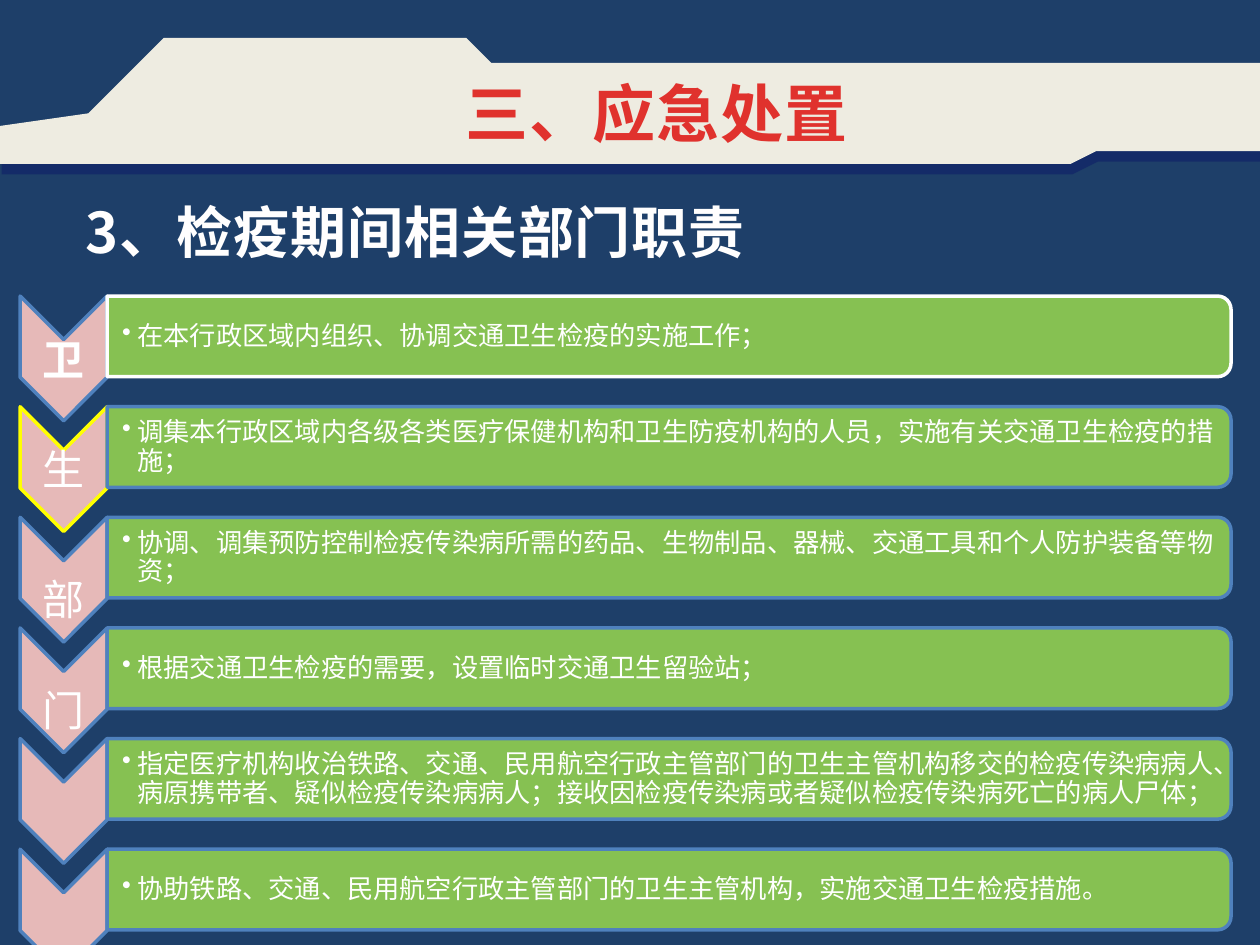
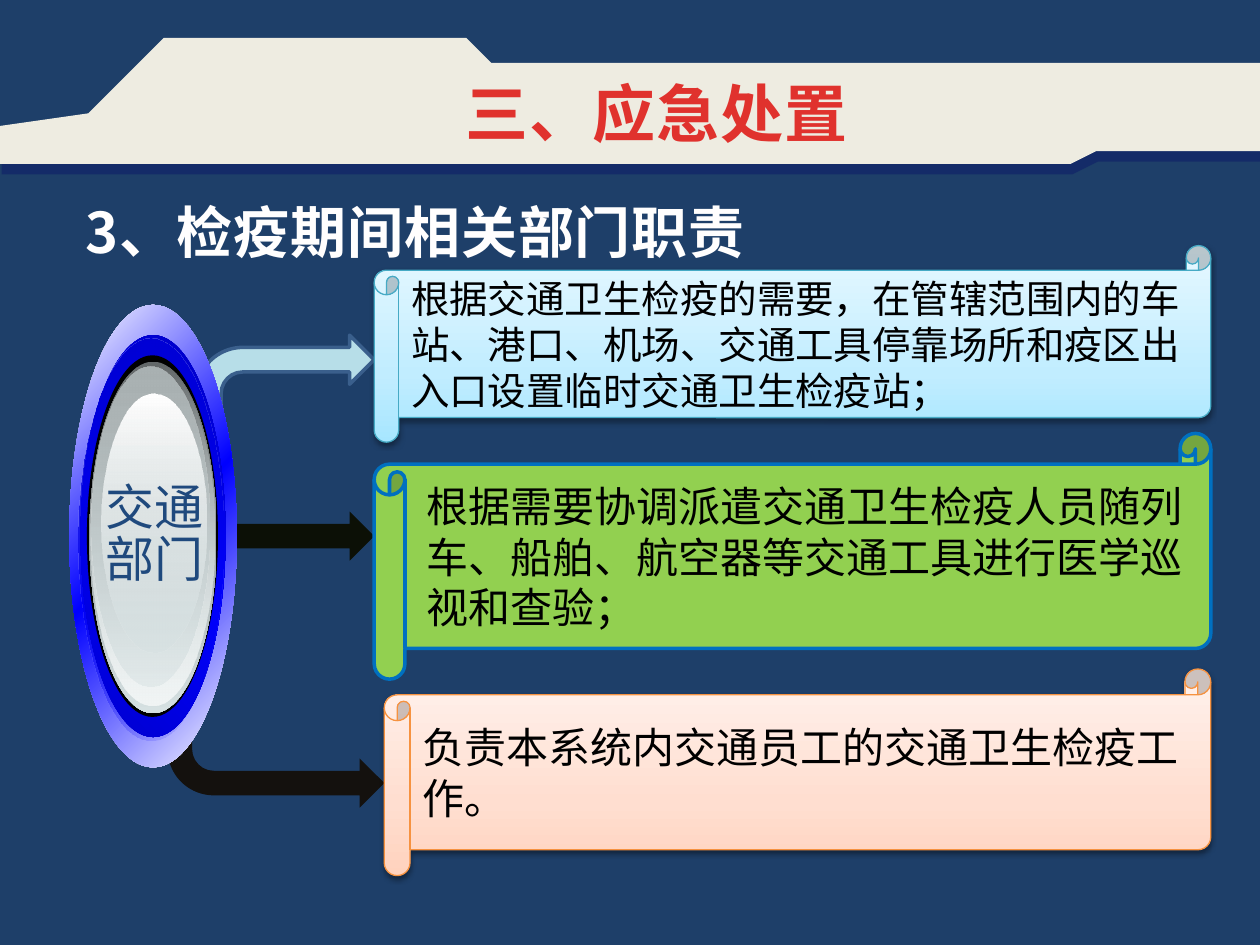
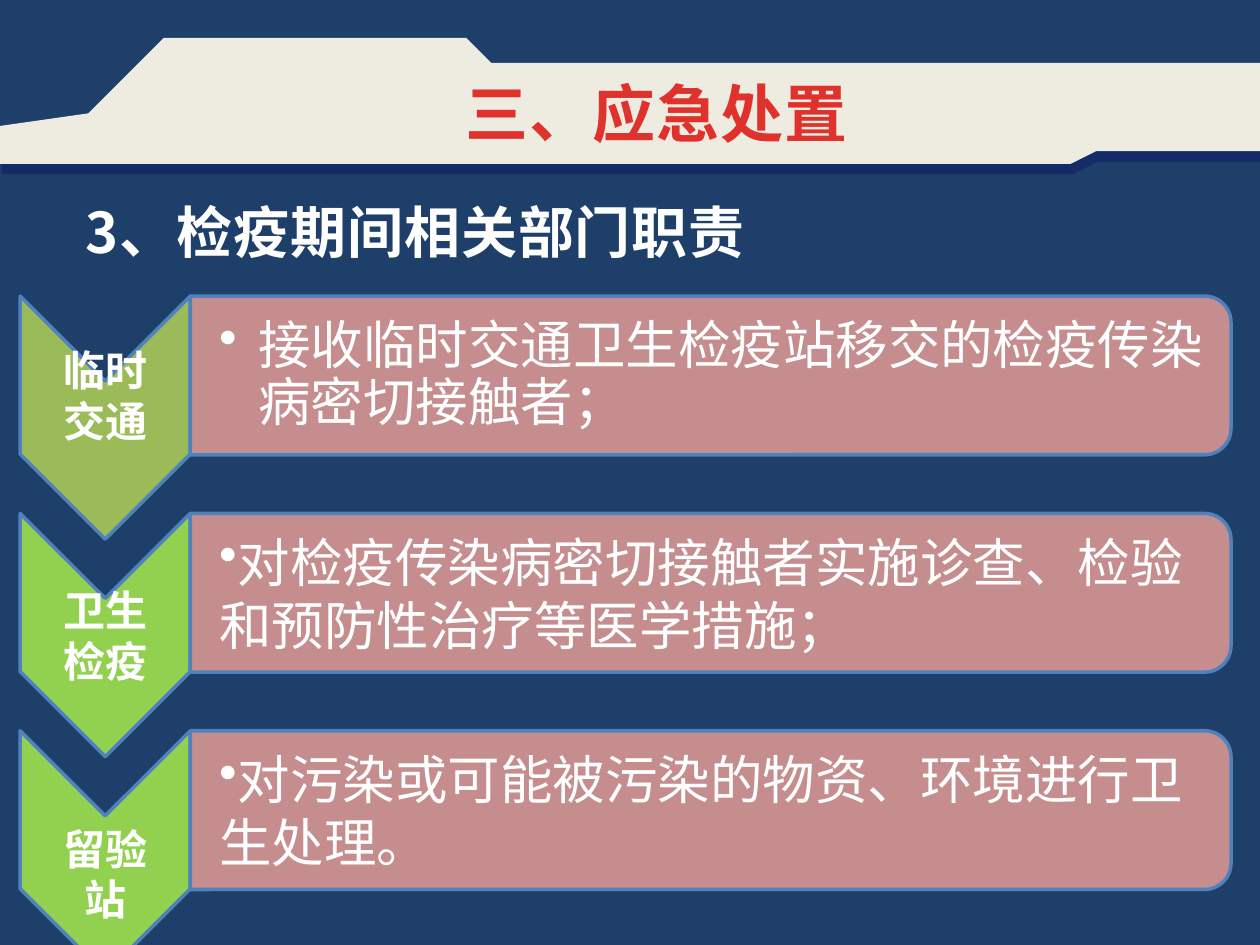
import dataclasses
from typing import NamedTuple, Optional, Union

import lxml.etree
import pptx
import pptx.dml.color
import pptx.enum.shapes
import pptx.enum.text
import pptx.oxml.ns
import pptx.util

# ---- Shared look: a grid of 100 columns by 75 rows covers the slide ----
SLIDE_W, SLIDE_H = pptx.util.Inches(10), pptx.util.Inches(7.5)
COLUMNS = 100
CELL = SLIDE_W // COLUMNS
FONT = "Noto Sans CJK SC"
NAVY, IVORY, RED, WHITE, BLACK = "1F497D", "EEECE1", "E0322D", "FFFFFF", "000000"
EDGE, LIME, PINK, ROSE, OLIVE = "4F81BD", "92D050", "E6B9B8", "D99694", "9BBB59"
LOOSE, TIGHT = 1.2, 1.08  # line height as a share of the text size

TITLE = "三、应急处置"
HEADING = "3、检疫期间相关部门职责"

SHAPE = pptx.enum.shapes.MSO_SHAPE
ALIGN = pptx.enum.text.PP_ALIGN
ANCHOR = pptx.enum.text.MSO_ANCHOR
qn = pptx.oxml.ns.qn


class Box(NamedTuple):
    left: float
    top: float
    width: float
    height: float


class Stop(NamedTuple):
    pos: int
    color: str
    alpha: int = 100


class Gradient(NamedTuple):
    angle: int
    stops: tuple


class Line(NamedTuple):
    color: str
    width: float = 2


class Shadow(NamedTuple):
    color: str
    alpha: int
    blur: float
    dist: float
    angle: int


class Style(NamedTuple):
    size: float
    color: str = WHITE
    bold: bool = False
    spacing: float = LOOSE
    tracking: int = 0
    align: Optional[ALIGN] = None


@dataclasses.dataclass(frozen=True)
class Row:
    text: str
    label: tuple = ()
    label_bold: bool = False
    label_drop: float = 0
    chevron_fill: str = PINK
    chevron_line: str = EDGE
    bar_line: str = EDGE
    indent: float = 0
    spacing: float = TIGHT


@dataclasses.dataclass(frozen=True)
class ChevronList:
    rows: tuple
    pitch: float
    chevron: Box  # first chevron as it is seen
    bar: Box  # first bar as it is seen
    bar_fill: str
    size: int
    margin: float


@dataclasses.dataclass(frozen=True)
class Scroll:
    box: Box
    text: str
    size: int
    fill: Union[str, Gradient]
    line: Line
    shadow: Optional[Shadow] = None
    left: float = 1
    right: float = 1


# ---- Drawing helpers ----
def grid(n: float) -> int:
    return round(n * CELL)


def sub(parent, tag: str, **attrs):
    return lxml.etree.SubElement(parent, qn(tag), {k: str(v) for k, v in attrs.items()})


def color(parent, hex_color: str, alpha: int = 100) -> None:
    node = sub(parent, "a:srgbClr", val=hex_color)
    if alpha < 100:
        sub(node, "a:alpha", val=alpha * 1000)


def paint(shape, fill, alpha: int = 100, line: Optional[Line] = None,
          shadow: Optional[Shadow] = None) -> None:
    spPr = shape.element.spPr
    shape.fill.background()
    old = spPr.find(qn("a:noFill"))
    if isinstance(fill, Gradient):
        new = lxml.etree.Element(qn("a:gradFill"), rotWithShape="1")
        stops = sub(new, "a:gsLst")
        for stop in fill.stops:
            color(sub(stops, "a:gs", pos=stop.pos * 1000), stop.color, stop.alpha)
        sub(new, "a:lin", ang=fill.angle * 60000, scaled=0)
    else:
        new = lxml.etree.Element(qn("a:solidFill"))
        color(new, fill, alpha)
    spPr.replace(old, new)
    if line:
        shape.line.color.rgb = pptx.dml.color.RGBColor.from_string(line.color)
        shape.line.width = pptx.util.Pt(line.width)
    else:
        shape.line.fill.background()
    shape.shadow.inherit = False
    if shadow:
        outer = sub(spPr.find(qn("a:effectLst")), "a:outerShdw",
                    blurRad=pptx.util.Pt(shadow.blur), dist=pptx.util.Pt(shadow.dist),
                    dir=shadow.angle * 60000, algn="ctr", rotWithShape=0)
        color(outer, shadow.color, shadow.alpha)


def add_shape(s, kind, box: Box, fill, turned: bool = False, **look):
    """Draw a preset shape; a turned one fills its box after a quarter turn."""
    left, top, width, height = box
    if turned:
        left, top = left + (width - height) / 2, top + (height - width) / 2
        width, height = height, width
    shape = s.shapes.add_shape(kind, *map(grid, (left, top, width, height)))
    shape.rotation = 90 if turned else 0
    paint(shape, fill, **look)
    return shape


def write(tf, lines, style: Style, indent: Optional[float] = None,
          bullet: Optional[str] = None) -> None:
    for i, text in enumerate(lines):
        p = tf.paragraphs[0] if i == 0 else tf.add_paragraph()
        p.alignment = style.align
        p.line_spacing = pptx.util.Pt(round(style.size * style.spacing, 1))
        p.space_before = pptx.util.Pt(0)
        if indent is not None:
            pPr = p._p.get_or_add_pPr()
            pPr.set("marL", str(grid(indent)))
            pPr.set("indent", str(-grid(indent)))
            if bullet:
                sub(pPr, "a:buChar", char=bullet)
            else:
                sub(pPr, "a:buNone")
        r = p.add_run()
        r.text = text
        r.font.size = pptx.util.Pt(style.size)
        r.font.bold = style.bold
        r.font.color.rgb = pptx.dml.color.RGBColor.from_string(style.color)
        r.font.name = FONT
        rPr = r._r.get_or_add_rPr()
        sub(rPr, "a:ea", typeface=FONT)
        if style.tracking:
            rPr.set("spc", str(style.tracking))


def set_frame(tf, left: float, top: float, right: float, bottom: float) -> None:
    tf.word_wrap = True
    tf.vertical_anchor = ANCHOR.MIDDLE
    tf.margin_left, tf.margin_top = grid(left), grid(top)
    tf.margin_right, tf.margin_bottom = grid(right), grid(bottom)


def add_text(s, box: Box, lines, style: Style, left: float = 0.2, edge: float = 0.2,
             **paragraph) -> None:
    tf = s.shapes.add_textbox(*map(grid, box)).text_frame
    set_frame(tf, left, edge, edge, edge)
    write(tf, lines, style, **paragraph)


# ---- Template: background, title band and placeholder places ----
BAND = ((7.4, 9.3), (12.9, 3.2), (37.3, 3.2), (38.8, 5.2), (100, 5.2),
        (99.9, 11.6), (86.6, 11.8), (84.8, 13.2), (-0.2, 13.2), (0.1, 9.6))
PLACEHOLDERS = (Box(11.7, 5.8, 80.8, 6.2), Box(5.8, 15.2, 90, 57.4))


def prepare_template(prs):
    fill = prs.slide_master.background.fill
    fill.solid()
    fill.fore_color.rgb = pptx.dml.color.RGBColor.from_string(NAVY)
    layout = prs.slide_layouts[1]
    for ph, box in zip(layout.placeholders, PLACEHOLDERS):
        ph.left, ph.top, ph.width, ph.height = map(grid, box)
    return layout


def move_band_to_layout(s, layout) -> None:
    veil = add_shape(s, SHAPE.RECTANGLE, Box(0, 0, 100, 75), "1A1A1A", alpha=20)
    builder = s.shapes.build_freeform(*BAND[0], scale=CELL)
    builder.add_line_segments(BAND[1:], close=True)
    band = builder.convert_to_shape()
    paint(band, IVORY, shadow=Shadow("000066", 30, 0, 6.1, 81))
    for place, shape in enumerate((veil, band), start=2):
        layout.shapes.element.insert(place, shape.element)


def add_slide(prs, layout):
    s = prs.slides.add_slide(layout)
    title, body = s.placeholders
    title.text_frame.vertical_anchor = ANCHOR.MIDDLE
    write(title.text_frame, [TITLE],
          Style(36, RED, bold=True, tracking=50, align=ALIGN.CENTER))
    write(body.text_frame, [HEADING], Style(32, "FFFEFE", bold=True, tracking=50),
          indent=3.8)
    return s


# ---- Slides 1 and 3: chevrons with bars ----
def draw_chevron_list(s, spec_list: ChevronList) -> None:
    c = spec_list
    for i, row in enumerate(c.rows):
        shift = i * c.pitch
        chevron = c.chevron._replace(top=c.chevron.top + shift)
        bar = c.bar._replace(top=c.bar.top + shift)
        add_shape(s, SHAPE.CHEVRON, chevron, row.chevron_fill, turned=True,
                  line=Line(row.chevron_line))
        if row.label:
            label = Box(chevron.left, chevron.top + chevron.width / 2 + row.label_drop,
                        chevron.width, chevron.height - chevron.width)
            add_text(s, label, row.label,
                     Style(24, bold=row.label_bold, align=ALIGN.CENTER))
        add_shape(s, SHAPE.ROUND_2_SAME_RECTANGLE, bar, c.bar_fill, turned=True,
                  alpha=90, line=Line(row.bar_line))
        inset = bar.height / 20
        inner = Box(bar.left, bar.top + inset, bar.width - inset, bar.height - 2 * inset)
        add_text(s, inner, [row.text], Style(c.size, spacing=row.spacing),
                 left=c.margin, edge=0.1, indent=row.indent, bullet="•")


HEALTH = ChevronList(
    rows=(
        Row("在本行政区域内组织、协调交通卫生检疫的实施工作；", ("卫",), label_bold=True,
            bar_line=WHITE, indent=1.2),
        Row("调集本行政区域内各级各类医疗保健机构和卫生防疫机构的人员，"
            "实施有关交通卫生检疫的措施；", ("生",), chevron_line="FFFF00", indent=1.2),
        Row("协调、调集预防控制检疫传染病所需的药品、生物制品、器械、"
            "交通工具和个人防护装备等物资；", ("部",), label_drop=1.5, indent=1.2),
        Row("根据交通卫生检疫的需要，设置临时交通卫生留验站；", ("门",),
            label_drop=1.5, indent=1.2),
        Row("指定医疗机构收治铁路、交通、民用航空行政主管部门的卫生主管机构移交的"
            "检疫传染病病人、病原携带者、疑似检疫传染病病人；"
            "接收因检疫传染病或者疑似检疫传染病死亡的病人尸体；", indent=1.2),
        Row("协助铁路、交通、民用航空行政主管部门的卫生主管机构，实施交通卫生检疫措施。",
            indent=1.2),
    ),
    pitch=8.78, chevron=Box(1.6, 23.5, 6.9, 9.9), bar=Box(8.5, 23.5, 89.2, 6.4),
    bar_fill=LIME, size=15, margin=1.2)

STATION = ChevronList(
    rows=(
        Row("接收临时交通卫生检疫站移交的检疫传染病密切接触者；", ("临时", "交通"), True,
            label_drop=-1.8, chevron_fill=OLIVE, indent=3.1),
        Row("对检疫传染病密切接触者实施诊查、检验和预防性治疗等医学措施；",
            ("卫生", "检疫"), True, chevron_fill=LIME, spacing=LOOSE),
        Row("对污染或可能被污染的物资、环境进行卫生处理。", ("留验", "站"), True,
            label_drop=1.7, chevron_fill=LIME, spacing=LOOSE),
    ),
    pitch=17.25, chevron=Box(1.6, 23.5, 13.5, 19.3), bar=Box(15.1, 23.5, 82.6, 12.6),
    bar_fill=ROSE, size=30, margin=2.3)


# ---- Slide 2: oval badge, bent arrows and scrolls ----
SOFT = Shadow(BLACK, 38, 3.1, 1.6, 90)
ARROWS = (  # box, fill, line, upside down
    (Box(12.5, 36.7, 17.2, 7.8), "0C1006", None, True),
    (Box(13.3, 56.3, 17.2, 7.8), "14110E", None, True),
    (Box(15.6, 26.6, 14.1, 7.8), "B7DEE8", Line("3A5F8C"), False),
)
OVALS = (
    (Box(5.5, 24.2, 13.3, 36.7),
     Gradient(45, (Stop(0, WHITE), Stop(50, "0000FF"), Stop(100, WHITE)))),
    (Box(6.4, 26.6, 11.5, 31.9),
     Gradient(315, (Stop(0, "0000C3"), Stop(50, "0000FF"), Stop(100, "0000C3")))),
    (Box(6.2, 26.9, 11.5, 31.9),
     Gradient(45, (Stop(0, "0000D1"), Stop(100, "0000FF", 0)))),
    (Box(6.9, 28.2, 10.4, 28.7), BLACK),
    (Box(7.1, 28.7, 10.1, 27.9),
     Gradient(90, (Stop(0, "636869"), Stop(100, "D6E1E2")))),
    (Box(7.2, 28.8, 9.8, 27.2),
     Gradient(90, (Stop(0, "D6E1E2", 0), Stop(100, "F1F5F5")))),
    (Box(7.3, 29.1, 9.3, 25.4),
     Gradient(90, (Stop(0, "AAB2B3"), Stop(100, "D6E1E2", 48)))),
    (Box(8.1, 31.2, 8.3, 20.6),
     Gradient(90, (Stop(0, WHITE), Stop(100, "D6E1E2", 38)))),
)
SCROLLS = (
    Scroll(Box(29.7, 19.5, 66.4, 15.6),
           "根据交通卫生检疫的需要，在管辖范围内的车站、港口、机场、"
           "交通工具停靠场所和疫区出入口设置临时交通卫生检疫站；", 22,
           Gradient(270, (Stop(0, "A7E6FF"), Stop(35, "C1EDFF"), Stop(100, "E7F8FF"))),
           Line("46AAC5", 0.75), SOFT),
    Scroll(Box(29.7, 34.4, 66.4, 19.5),
           "根据需要协调派遣交通卫生检疫人员随列车、船舶、航空器等交通工具"
           "进行医学巡视和查验；", 24, LIME, Line("0070C0"), left=1.7, right=0),
    Scroll(Box(30.5, 53.1, 65.6, 16.4), "负责本系统内交通员工的交通卫生检疫工作。", 24,
           Gradient(270, (Stop(0, "FFD2BD"), Stop(35, "FFDED0"), Stop(100, "FFF2ED"))),
           Line("F69240", 0.75), SOFT),
)


def draw_transport(s) -> None:
    for box, fill, line, upside_down in ARROWS:
        arrow = add_shape(s, SHAPE.BENT_ARROW, box, fill, line=line)
        arrow.adjustments[3] = 0.47
        if upside_down:
            arrow.element.spPr.find(qn("a:xfrm")).set("flipV", "1")
    for box, fill in OVALS:
        add_shape(s, SHAPE.OVAL, box, fill)
    add_text(s, Box(6.8, 35.7, 10.9, 13.5), ("交通", "部门"),
             Style(28, NAVY, spacing=TIGHT, align=ALIGN.CENTER))
    for scroll in SCROLLS:
        shape = add_shape(s, SHAPE.HORIZONTAL_SCROLL, scroll.box, scroll.fill,
                          line=scroll.line, shadow=scroll.shadow)
        set_frame(shape.text_frame, scroll.left, 0.5, scroll.right, 0.5)
        write(shape.text_frame, [scroll.text],
              Style(scroll.size, BLACK, align=ALIGN.LEFT))


def main() -> None:
    prs = pptx.Presentation()
    prs.slide_width, prs.slide_height = SLIDE_W, SLIDE_H
    layout = prepare_template(prs)
    health, transport, station = (add_slide(prs, layout) for _ in range(3))
    move_band_to_layout(health, layout)
    draw_chevron_list(health, HEALTH)
    draw_transport(transport)
    draw_chevron_list(station, STATION)
    prs.save("out.pptx")


if __name__ == "__main__":
    main()
